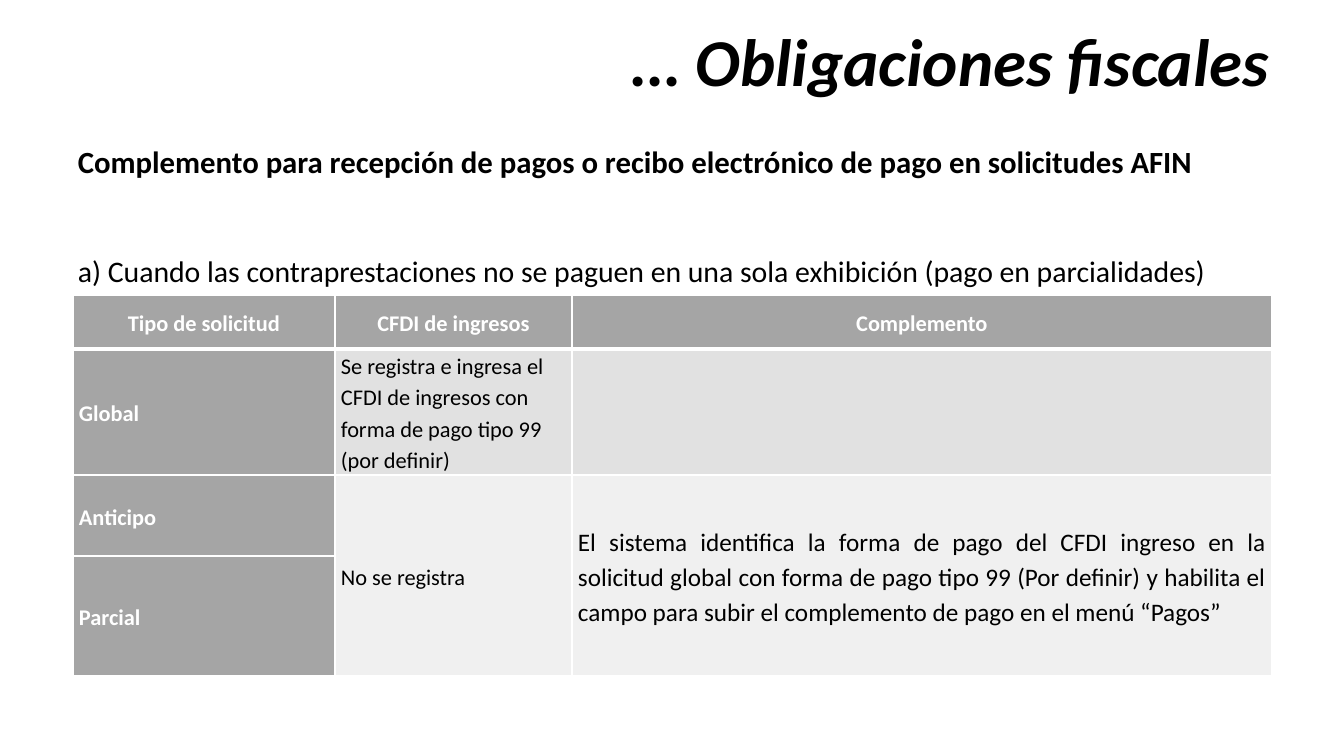
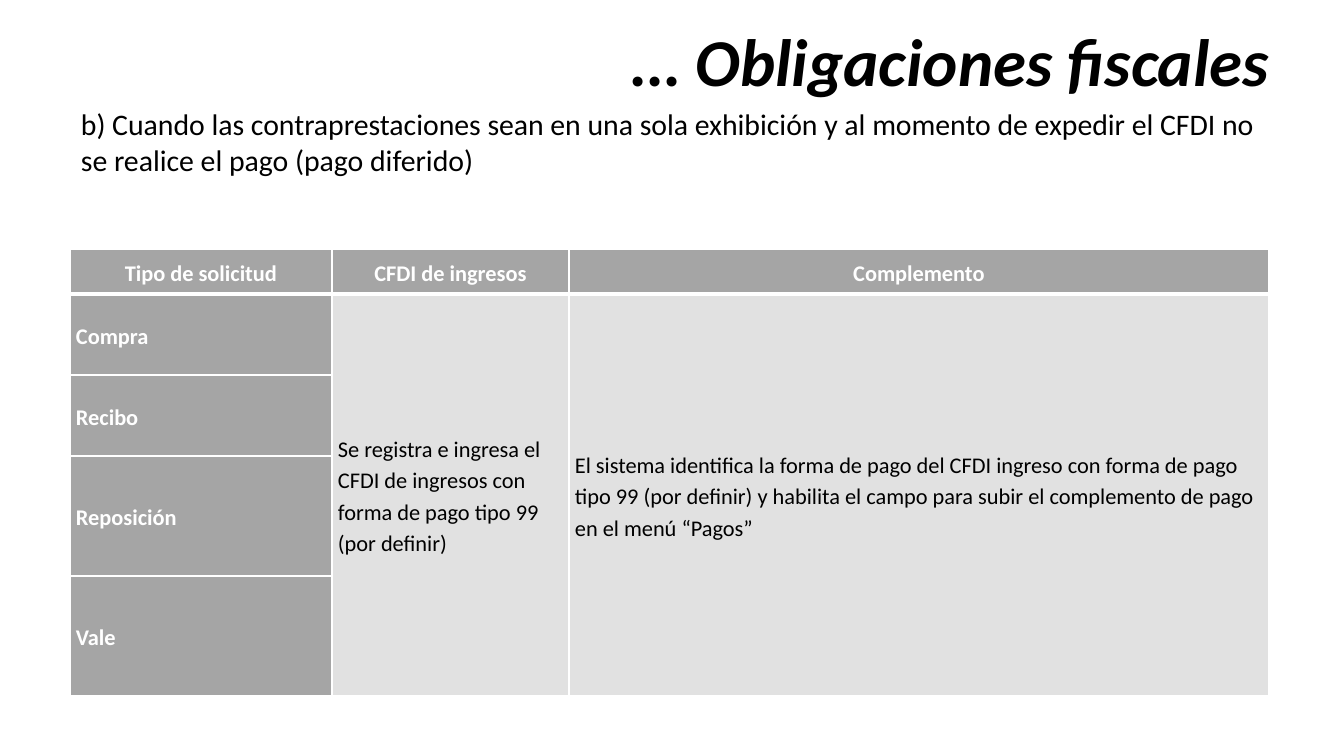
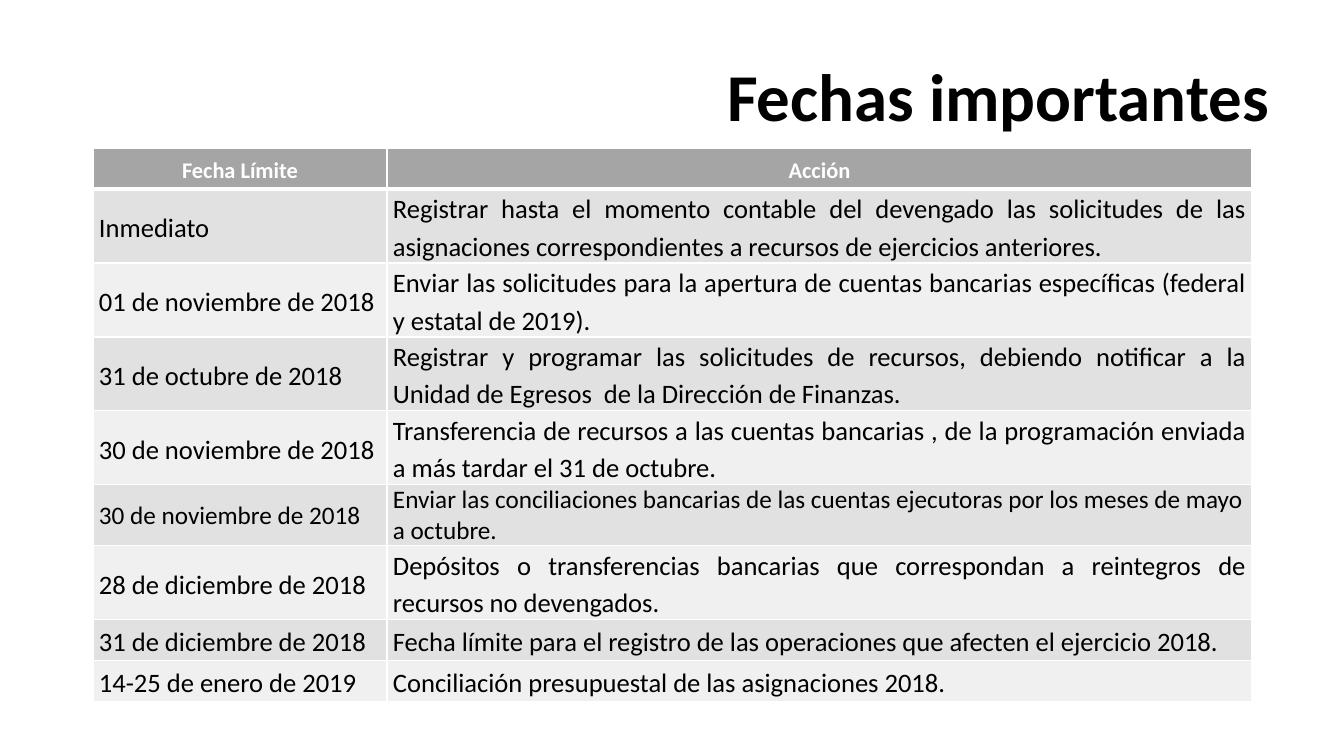
import pptx
import pptx.dml.color
import pptx.enum.text
import pptx.oxml
import pptx.oxml.ns
import pptx.util

PX = 914400 / 100.8
FONT = "Calibri"
BLACK = pptx.dml.color.RGBColor(0x00, 0x00, 0x00)
WHITE = pptx.dml.color.RGBColor(0xFF, 0xFF, 0xFF)
GRAY = pptx.dml.color.RGBColor(0xA5, 0xA5, 0xA5)
BANDS = [pptx.dml.color.RGBColor(0xF0, 0xF0, 0xF0), pptx.dml.color.RGBColor(0xE1, 0xE1, 0xE1)]
ALIGN = pptx.enum.text.PP_ALIGN
MIDDLE = pptx.enum.text.MSO_ANCHOR.MIDDLE

PARAGRAPH_KEYS = {"alignment", "line_spacing", "space_before"}
TITLE = {"size": 47.8, "bold": True, "alignment": ALIGN.RIGHT}
INTRO = {"size": 21.3}
CELL = {"size": 16, "line_spacing": 1.15}
HEADER = CELL | {"bold": True, "alignment": ALIGN.CENTER}
LABEL = CELL | {"bold": True}
DATE = CELL | {"size": 19}
ACTION = DATE | {"alignment": ALIGN.JUSTIFY}
COMPACT = {"size": 18}

REQUEST_COLS = [262, 237, 700]
REQUEST_HEADER = ["Tipo de solicitud", "CFDI de ingresos", "Complemento"]
INCOME_CFDI = "Se registra e ingresa el CFDI de ingresos con forma de pago tipo 99 (por definir)"

DATES = [
    ("Inmediato", "Registrar hasta el momento contable del devengado las solicitudes de las "
     "asignaciones correspondientes a recursos de ejercicios anteriores."),
    ("01 de noviembre de 2018", "Enviar las solicitudes para la apertura de cuentas bancarias "
     "específicas (federal y estatal de 2019)."),
    ("31 de octubre de 2018", "Registrar y programar las solicitudes de recursos, debiendo "
     "notificar a la Unidad de Egresos  de la Dirección de Finanzas."),
    ("30 de noviembre de 2018", "Transferencia de recursos a las cuentas bancarias , de la "
     "programación enviada a más tardar el 31 de octubre."),
    ("30 de noviembre de 2018", "Enviar las conciliaciones bancarias de las cuentas ejecutoras "
     "por los meses de mayo a octubre."),
    ("28 de diciembre de 2018", "Depósitos o transferencias bancarias que correspondan a "
     "reintegros de recursos no devengados."),
    ("31 de diciembre de 2018", "Fecha límite para el registro de las operaciones que afecten "
     "el ejercicio 2018."),
    ("14-25 de enero de 2019", "Conciliación presupuestal de las asignaciones 2018."),
]
COMPACT_ROW = 4


def px(n):
    return pptx.util.Emu(round(n * PX))


def write(p, text, fmt, color=BLACK):
    r = p.add_run()
    r.text = text
    r.font.name = FONT
    r.font.color.rgb = color
    for key, value in fmt.items():
        if key in PARAGRAPH_KEYS:
            setattr(p, key, value)
        else:
            setattr(r.font, key, pptx.util.Pt(value) if key == "size" else value)


def add_text(slide, box, paragraphs, anchor=pptx.enum.text.MSO_ANCHOR.TOP):
    """Add a text box; paragraphs is a list of (text, format)."""
    tf = slide.shapes.add_textbox(*map(px, box)).text_frame
    tf.word_wrap = True
    tf.vertical_anchor = anchor
    for i, (text, fmt) in enumerate(paragraphs):
        write(tf.add_paragraph() if i else tf.paragraphs[0], text, fmt)


def add_title(slide, text, height, **fmt):
    add_text(slide, (0, 26, 1279, height), [(text, TITLE | fmt)], MIDDLE)


def set_borders(cell, **widths):
    """Draw white borders; widths in points by side: L, R, T, B."""
    tcPr = cell._tc.get_or_add_tcPr()
    for i, side in enumerate("LRTB"):
        width = pptx.util.Pt(widths.get(side, 1))
        tcPr.insert(i, pptx.oxml.parse_xml(
            f'<a:ln{side} {pptx.oxml.ns.nsdecls("a")} w="{width}"><a:solidFill>'
            f'<a:srgbClr val="{WHITE}"/></a:solidFill></a:ln{side}>'))


def format_cell(cell, fill, borders):
    cell.margin_left = cell.margin_right = px(6)
    cell.margin_top = cell.margin_bottom = 0
    cell.vertical_anchor = MIDDLE
    cell.fill.solid()
    cell.fill.fore_color.rgb = fill
    set_borders(cell, **borders)


def add_table(slide, left, top, cols, heights, header, body, labels=False, merges=()):
    """Body rows hold (text, format) or None; labels makes the first column gray."""
    rows = [[(text, HEADER) for text in header]] + body
    frame = slide.shapes.add_table(len(rows), len(cols), px(left), px(top),
                                   px(sum(cols)), px(sum(heights)))
    table = frame.table
    for col, width in zip(table.columns, cols):
        col.width = px(width)
    for row, height in zip(table.rows, heights):
        row.height = px(height)
    for i, row in enumerate(rows):
        borders = {0: {"B": 3}, 1: {"T": 3}}.get(i, {})
        for j, content in enumerate(row):
            cell = table.cell(i, j)
            strong = i == 0 or (labels and j == 0)
            format_cell(cell, GRAY if strong else BANDS[i % 2], borders)
            if content:
                write(cell.text_frame.paragraphs[0], *content, WHITE if strong else BLACK)
    for first, last in merges:
        table.cell(*first).merge(table.cell(*last))


def build_installments(slide):
    body = [
        [("Global", LABEL), (INCOME_CFDI, CELL), None],
        [("Anticipo", LABEL), ("No se registra", CELL),
         ("El sistema identifica la forma de pago del CFDI ingreso en la solicitud global con "
          "forma de pago tipo 99 (Por definir) y habilita el campo para subir el complemento de "
          "pago en el menú “Pagos”", CELL | {"size": 18, "alignment": ALIGN.JUSTIFY})],
        [("Parcial", LABEL), None, None],
    ]
    add_table(slide, 73, 295, REQUEST_COLS, [54, 126, 81, 120], REQUEST_HEADER, body,
              labels=True, merges=[((2, j), (3, j)) for j in (1, 2)])
    add_text(slide, (68, 138, 1204, 156), [
        ("Complemento para recepción de pagos o recibo electrónico de pago en solicitudes AFIN",
         {"size": 22, "bold": True, "alignment": ALIGN.JUSTIFY}),
        ("a) Cuando las contraprestaciones no se paguen en una sola exhibición "
         "(pago en parcialidades)",
         INTRO | {"alignment": ALIGN.JUSTIFY, "space_before": pptx.util.Pt(52)}),
    ])
    add_title(slide, "… Obligaciones fiscales", 83, italic=True, line_spacing=0.8)


def build_deferred(slide):
    body = [[(name, LABEL), None, None] for name in ("Compra", "Recibo", "Reposición", "Vale")]
    body[0][1:] = [
        (INCOME_CFDI, CELL),
        ("El sistema identifica la forma de pago del CFDI ingreso con forma de pago tipo 99 "
         "(por definir) y habilita el campo para subir el complemento de pago en el menú “Pagos”",
         CELL),
    ]
    add_table(slide, 70, 249, REQUEST_COLS, [45, 81, 81, 120, 120], REQUEST_HEADER, body,
              labels=True, merges=[((1, j), (4, j)) for j in (1, 2)])
    add_text(slide, (71, 101, 1204, 83), [
        ("b) Cuando las contraprestaciones sean en una sola exhibición y al momento de expedir "
         "el CFDI no se realice el pago (pago diferido)", INTRO)])
    add_title(slide, "… Obligaciones fiscales", 83, italic=True, line_spacing=0.8)


def build_dates(slide):
    body = [[(date, DATE), (action, ACTION)] for date, action in DATES]
    body[COMPACT_ROW] = [(text, COMPACT) for text in DATES[COMPACT_ROW]]
    add_table(slide, 93, 148, [294, 865], [41, 74, 74, 74, 74, 61, 74, 41, 41],
              ["Fecha Límite", "Acción"], body)
    add_title(slide, "Fechas importantes", 147, line_spacing=0.9)


def main():
    prs = pptx.Presentation()
    prs.slide_width, prs.slide_height = px(1344), px(756)
    for build in (build_installments, build_deferred, build_dates):
        build(prs.slides.add_slide(prs.slide_layouts[6]))
    prs.save("out.pptx")


if __name__ == "__main__":
    main()
